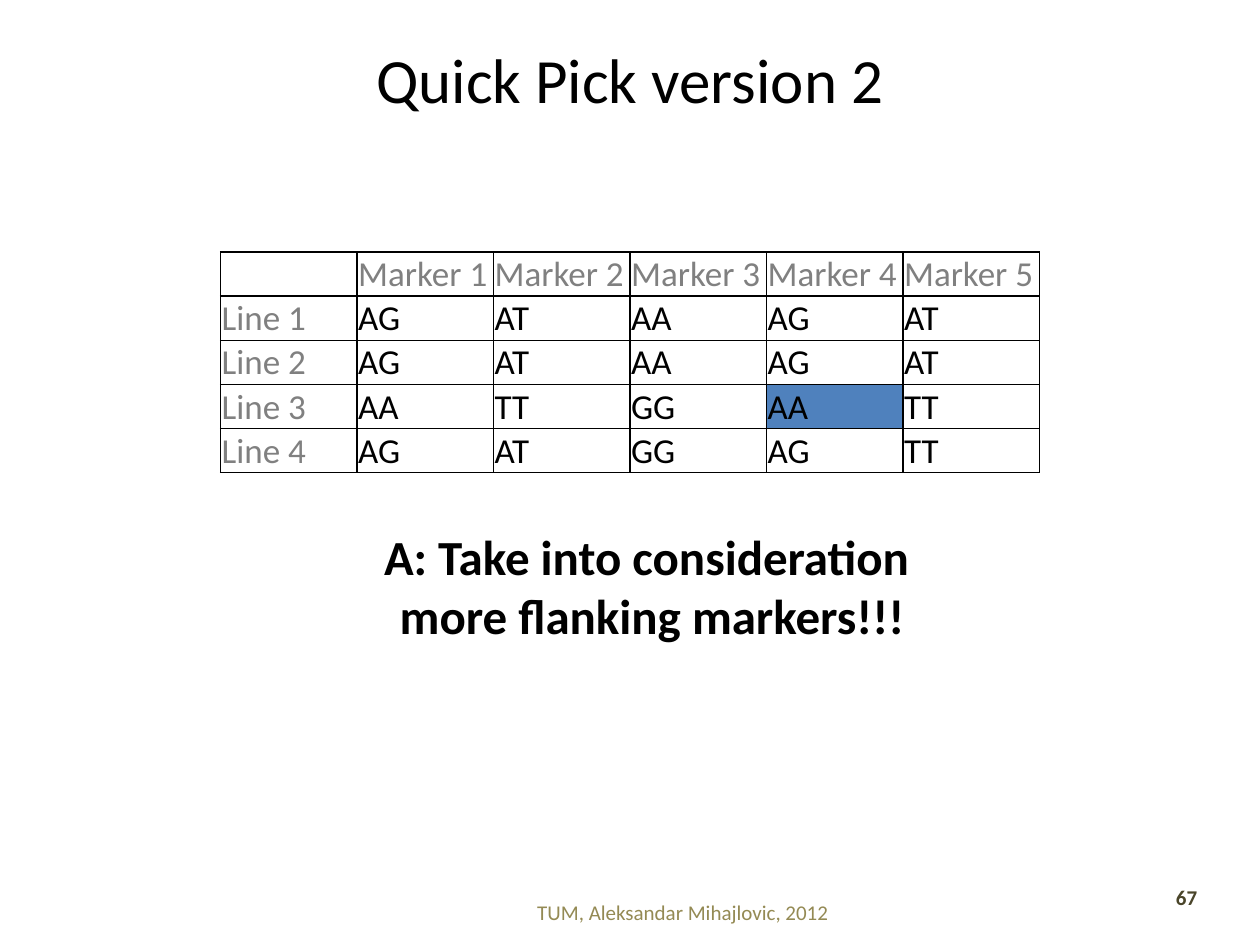
from lxml.etree import SubElement
from pptx import Presentation
from pptx.dml.color import RGBColor
from pptx.enum.text import MSO_ANCHOR as Anchor, PP_ALIGN as Align
from pptx.oxml.ns import qn
from pptx.util import Inches, Pt

COLORS = {"text": "000000", "label": "808080", "highlight": "4F81BD",
          "footer": "948A54", "number": "4A452A"}
TITLE = {"text": "Quick Pick version 2", "box": (0.5, 0, 9, 1.25), "size": 36,
         "color": "text", "align": Align.CENTER,
         "frame": {"vertical_anchor": Anchor.MIDDLE}}
TEXTS = [
    {"text": "TUM, Aleksandar Mihajlovic, 2012", "box": (2.53, 7.04, 5.78, 0.39),
     "size": 12, "color": "footer", "align": Align.CENTER,
     "frame": {"vertical_anchor": Anchor.MIDDLE}},
    {"text": "67", "box": (8.71, 6.97, 0.89, 0.39), "size": 12, "color": "number",
     "bold": True, "align": Align.RIGHT, "frame": {}},
    {"text": "A: Take into consideration\v more flanking markers!!!",
     "box": (2.17, 3.99, 5.92, 1.65), "size": 28, "color": "text", "bold": True,
     "align": Align.CENTER, "frame": {"margin_top": Inches(0.19)}},
]
GENOTYPES = [
    ["", "Marker 1", "Marker 2", "Marker 3", "Marker 4", "Marker 5"],
    ["Line 1", "AG", "AT", "AA", "AG", "AT"],
    ["Line 2", "AG", "AT", "AA", "AG", "AT"],
    ["Line 3", "AA", "TT", "GG", "AA", "TT"],
    ["Line 4", "AG", "AT", "GG", "AG", "TT"],
]
TABLE_BOX = (1.75, 2, 6.5, 1.75)
HIGHLIGHTED = (3, 4)
CELL_FORMAT = {"margin_left": Inches(0.01), "margin_right": Inches(0.01),
               "margin_top": Inches(0.01), "margin_bottom": 0,
               "vertical_anchor": Anchor.BOTTOM}


def apply_format(target, values):
    for name, value in values.items():
        setattr(target, name, value)


def write_text(frame, text, size, color, align=Align.LEFT, bold=False):
    frame.text = text
    for paragraph in frame.paragraphs:
        paragraph.alignment = align
        for run in paragraph.runs:
            apply_format(run.font, {"name": "Calibri", "size": Pt(size), "bold": bold})
            run.font.color.rgb = RGBColor.from_string(COLORS[color])


def fill_text_shape(shape, item):
    left, top, width, height = map(Inches, item["box"])
    apply_format(shape, {"left": left, "top": top, "width": width, "height": height})
    apply_format(shape.text_frame, {"word_wrap": True, **item["frame"]})
    write_text(shape.text_frame, item["text"], item["size"], item["color"],
               item["align"], item.get("bold", False))


def add_borders(cell):
    properties = cell._tc.get_or_add_tcPr()
    for position, side in enumerate(("lnL", "lnR", "lnT", "lnB")):
        line = SubElement(properties, qn(f"a:{side}"), w=str(Pt(1)))
        fill = SubElement(line, qn("a:solidFill"))
        SubElement(fill, qn("a:srgbClr"), val=COLORS["text"])
        properties.insert(position, line)


def add_genotype_table(slide):
    shape = slide.shapes.add_table(len(GENOTYPES), len(GENOTYPES[0]),
                                   *map(Inches, TABLE_BOX))
    table = shape.table
    apply_format(table, {"first_row": False, "horz_banding": False})
    for row, values in enumerate(GENOTYPES):
        for column, value in enumerate(values):
            cell = table.cell(row, column)
            apply_format(cell, CELL_FORMAT)
            is_label = row == 0 or column == 0
            write_text(cell.text_frame, value, 20, "label" if is_label else "text")
            if (row, column) == HIGHLIGHTED:
                cell.fill.solid()
                cell.fill.fore_color.rgb = RGBColor.from_string(COLORS["highlight"])
            else:
                cell.fill.background()
            add_borders(cell)


def main():
    """Build the marker table slide."""
    presentation = Presentation()
    apply_format(presentation, {"slide_width": Inches(10), "slide_height": Inches(7.5)})
    slide = presentation.slides.add_slide(presentation.slide_layouts[5])
    fill_text_shape(slide.shapes.title, TITLE)
    add_genotype_table(slide)
    for item in TEXTS:
        fill_text_shape(slide.shapes.add_textbox(0, 0, 0, 0), item)
    presentation.save("out.pptx")


if __name__ == "__main__":
    main()
